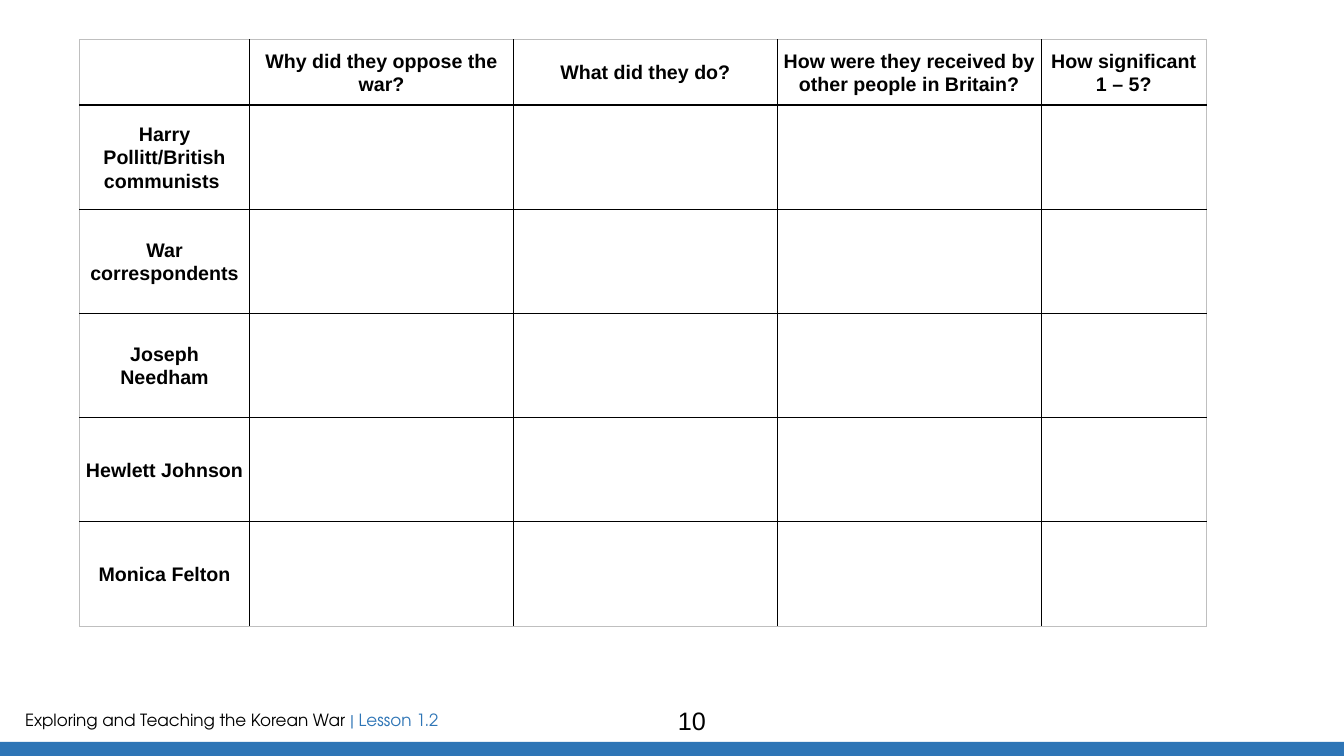
from dataclasses import dataclass

from lxml import etree
from pptx import Presentation
from pptx.dml.color import RGBColor
from pptx.enum.shapes import MSO_SHAPE
from pptx.enum.text import MSO_ANCHOR, MSO_AUTO_SIZE, PP_ALIGN
from pptx.oxml.ns import qn
from pptx.util import Pt

RECT = MSO_SHAPE.RECTANGLE
MIDDLE = MSO_ANCHOR.MIDDLE
GROW, FIXED = MSO_AUTO_SIZE.SHAPE_TO_FIT_TEXT, MSO_AUTO_SIZE.NONE
LEFT, CENTER = PP_ALIGN.LEFT, PP_ALIGN.CENTER

COLORS = {"ink": "000000", "blue": "2E75B6", "edge": "BFBFBF"}
HEADS = [
    "",
    "Why did they oppose the war?",
    "What did they do?",
    "How were they received by other people in Britain?",
    "How significant 1 – 5?",
]
PEOPLE = [
    "Harry Pollitt/British communists ",
    "War correspondents",
    "Joseph Needham",
    "Hewlett Johnson",
    "Monica Felton",
]
WIDTHS = [121.5, 188.5, 188.5, 188.5, 118]
HEIGHTS = [46.8] + [74.45] * len(PEOPLE)


@dataclass
class Phrase:
    text: str
    color: str = "ink"


@dataclass
class Label:
    box: tuple[float, float, float, float]
    phrases: list[Phrase]
    font: str
    size: float
    align: PP_ALIGN
    fit: MSO_AUTO_SIZE


LABELS = [
    Label((10.8, 503.3, 324.7, 21.8),
          [Phrase("Exploring and Teaching the Korean War "), Phrase("| Lesson 1.2", "blue")],
          "TeX Gyre Adventor", 12, LEFT, GROW),
    Label((311.8, 500.5, 365, 29), [Phrase("10")], "Arial", 18, CENTER, FIXED),
]


def paint(font, name: str, size: float, color: str, bold: bool = False) -> None:
    font.name, font.size, font.bold = name, Pt(size), bold
    font.color.rgb = RGBColor.from_string(COLORS[color])


def draw_label(slide, label: Label) -> None:
    frame = slide.shapes.add_textbox(*map(Pt, label.box)).text_frame
    frame.word_wrap, frame.auto_size = True, label.fit
    para = frame.paragraphs[0]
    para.alignment = label.align
    for phrase in label.phrases:
        run = para.add_run()
        run.text = phrase.text
        paint(run.font, label.font, label.size, phrase.color)


def draw_edge(cell, side: str, outer: bool) -> None:
    line = etree.SubElement(cell._tc.get_or_add_tcPr(), qn(f"a:ln{side}"))
    line.set("w", str(Pt(0.5 if outer else 1)))
    fill = etree.SubElement(line, qn("a:solidFill"))
    color = etree.SubElement(fill, qn("a:srgbClr"))
    color.set("val", COLORS["edge" if outer else "ink"])


def draw_cell(cell, text: str, outer: dict[str, bool]) -> None:
    for side, flag in outer.items():
        draw_edge(cell, side, flag)
    cell.fill.background()
    cell.vertical_anchor = MIDDLE
    cell.margin_left = cell.margin_right = Pt(4.5)
    cell.margin_top = cell.margin_bottom = Pt(0)
    cell.text_frame.text = text
    para = cell.text_frame.paragraphs[0]
    para.alignment, para.line_spacing = CENTER, 1.07
    for run in para.runs:
        paint(run.font, "Arial", 14, "ink", True)


def draw_table(slide) -> None:
    rows = [HEADS] + [[name] + [""] * (len(HEADS) - 1) for name in PEOPLE]
    last, end = len(rows) - 1, len(HEADS) - 1
    table = slide.shapes.add_table(
        len(rows), len(HEADS), Pt(56.8), Pt(28.2), Pt(sum(WIDTHS)), Pt(sum(HEIGHTS))
    ).table
    table.horz_banding = False
    for col, width in zip(table.columns, WIDTHS):
        col.width = Pt(width)
    for row, height in zip(table.rows, HEIGHTS):
        row.height = Pt(height)
    for r, texts in enumerate(rows):
        for c, text in enumerate(texts):
            outer = {"L": c == 0, "R": c == end, "T": r == 0, "B": r == last}
            draw_cell(table.cell(r, c), text, outer)


def draw_band(slide) -> None:
    band = slide.shapes.add_shape(RECT, Pt(0), Pt(530), Pt(960), Pt(10))
    band.shadow.inherit = False
    band.fill.solid()
    band.fill.fore_color.rgb = RGBColor.from_string(COLORS["blue"])
    band.line.fill.background()


def main() -> None:
    deck = Presentation()
    deck.slide_width, deck.slide_height = Pt(960), Pt(540)
    slide = deck.slides.add_slide(deck.slide_layouts[6])
    draw_band(slide)
    draw_table(slide)
    for label in LABELS:
        draw_label(slide, label)
    deck.save("out.pptx")


if __name__ == "__main__":
    main()
